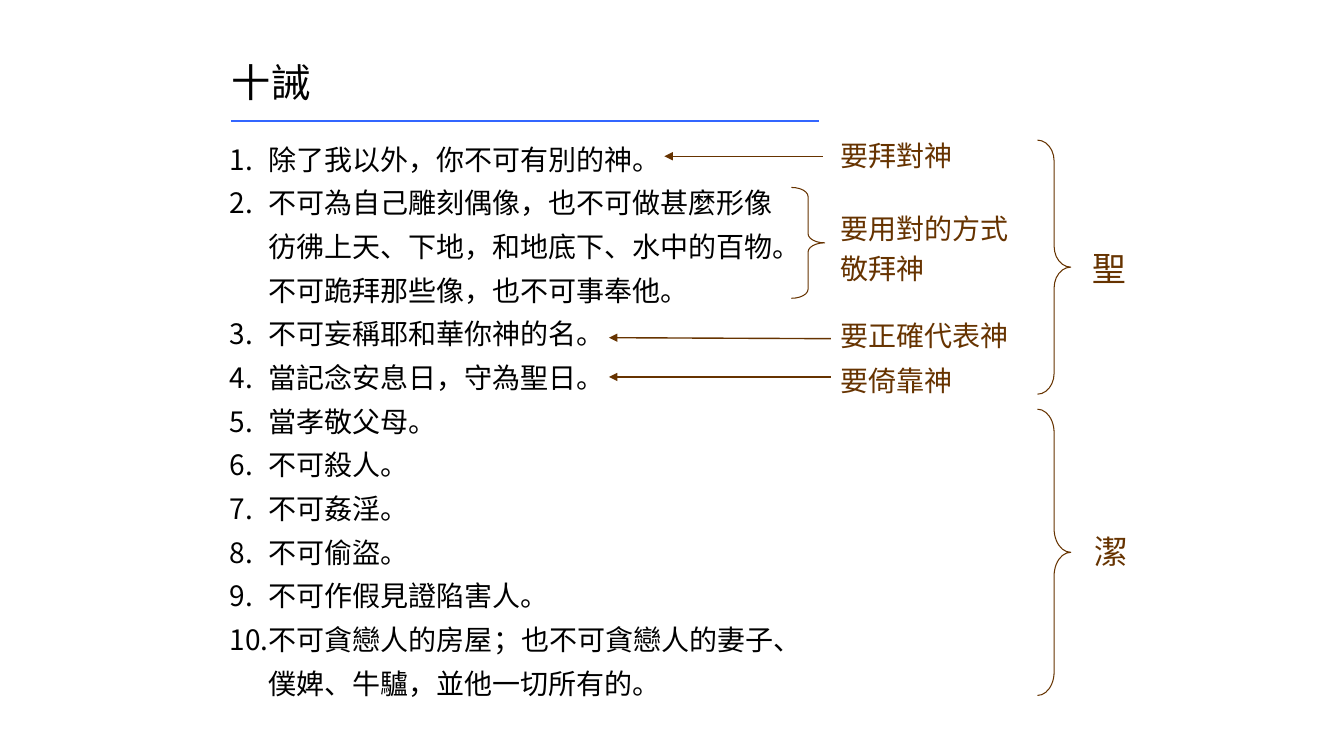
from lxml.etree import SubElement
from pptx import Presentation
from pptx.dml.color import RGBColor
from pptx.enum.shapes import MSO_CONNECTOR, MSO_SHAPE
from pptx.enum.text import MSO_ANCHOR, MSO_AUTO_SIZE, PP_ALIGN
from pptx.oxml.ns import qn
from pptx.util import Inches, Pt

COLORS = {"ink": "000000", "note": "663300", "rule": "3366FF"}
LATIN, CJK = "Calibri", "Noto Sans CJK SC"

COMMANDMENTS = [
    "除了我以外，你不可有別的神。",
    "不可為自己雕刻偶像，也不可做甚麼形像彷彿上天、下地，和地底下、水中的百物。不可跪拜那些像，也不可事奉他。",
    "不可妄稱耶和華你神的名。",
    "當記念安息日，守為聖日。",
    "當孝敬父母。",
    "不可殺人。",
    "不可姦淫。",
    "不可偷盜。",
    "不可作假見證陷害人。",
    "不可貪戀人的房屋；也不可貪戀人的妻子、僕婢、牛驢，並他一切所有的。",
]


def color(name):
    return RGBColor.from_string(COLORS[name])


def write(frame, text, size=20, font=LATIN, ink="note", spacing=None,
          wrap=False, numbered=False):
    """Fill a text frame, one paragraph per line of text."""
    frame.text = text
    frame.word_wrap = wrap
    frame.auto_size = MSO_AUTO_SIZE.SHAPE_TO_FIT_TEXT
    frame.vertical_anchor = MSO_ANCHOR.TOP
    for paragraph in frame.paragraphs:
        paragraph.alignment = PP_ALIGN.LEFT
        if spacing:
            paragraph.line_spacing = spacing
        if numbered:
            properties = paragraph._p.get_or_add_pPr()
            properties.set("marL", str(Inches(0.38)))
            properties.set("indent", str(Inches(-0.38)))
            SubElement(properties, qn("a:buFont"), typeface="+mj-lt")
            SubElement(properties, qn("a:buAutoNum"), type="arabicPeriod")
        for run in paragraph.runs:
            run.font.size = Pt(size)
            run.font.name = font
            run.font.color.rgb = color(ink)
            SubElement(run._r.get_or_add_rPr(), qn("a:ea"), typeface=CJK)


class Board:
    """Holds the current slide and its drawing style."""

    def __init__(self, slide):
        self.slide = slide
        self.shapes = slide.shapes

    def title(self, text, left, top, width, height):
        heading = self.shapes.title
        heading.left, heading.top = Inches(left), Inches(top)
        heading.width, heading.height = Inches(width), Inches(height)
        write(heading.text_frame, text, size=28, ink="ink")

    def text(self, text, left, top, width, height, **style):
        box = self.shapes.add_textbox(
            Inches(left), Inches(top), Inches(width), Inches(height))
        write(box.text_frame, text, **style)
        return box

    def brace(self, left, top, height, curl):
        brace = self.shapes.add_shape(
            MSO_SHAPE.RIGHT_BRACE,
            Inches(left), Inches(top), Inches(0.33), Inches(height))
        brace.adjustments[0] = curl
        brace.adjustments[1] = 0.5
        brace.shadow.inherit = False
        brace.fill.background()
        brace.line.color.rgb = color("note")
        brace.line.width = Pt(0.75)

    def line(self, start, end, ink="note", width=1, arrow=True):
        line = self.shapes.add_connector(
            MSO_CONNECTOR.STRAIGHT, *map(Inches, start + end))
        line.line.color.rgb = color(ink)
        line.line.width = Pt(width)
        if arrow:
            SubElement(line.line._get_or_add_ln(), qn("a:tailEnd"), type="triangle")
        SubElement(line._element.spPr, qn("a:effectLst"))
        return line


def main():
    deck = Presentation()
    deck.slide_width, deck.slide_height = Inches(13.33), Inches(7.5)
    board = Board(deck.slides.add_slide(deck.slide_layouts[5]))

    # Heading and its rule
    board.title("十誡", 2.2, 0.53, 0.98, 0.57)
    board.line((2.29, 1.2), (8.12, 1.2), ink="rule", width=1.5, arrow=False)

    # The ten commandments
    board.text("\n".join(COMMANDMENTS), 2.18, 1.26, 5.78, 5.74, font=CJK,
               ink="ink", spacing=1.3, wrap=True, numbered=True)

    # Meaning of the first four
    for meaning, top, width, height in [
        ("要拜對神", 1.26, 1.31, 0.5),
        ("要用對的方式\n敬拜神", 1.98, 1.88, 0.91),
        ("要正確代表神", 3.04, 1.87, 0.5),
        ("要倚靠神", 3.49, 1.31, 0.5),
    ]:
        label = board.text(meaning, 8.24, top, width, height, spacing=1.2)

    # Arrows back to the list; the last one leaves the last label
    board.line((8.16, 1.55), (6.59, 1.55))
    board.line((8.24, 3.36), (6.04, 3.35))
    reliance = board.line((8.24, 3.74), (6.04, 3.74))
    reliance.begin_connect(label, 1)

    # Braces and the two groups
    board.brace(7.85, 1.86, 1.1, 0.276)
    board.brace(10.29, 1.39, 2.52, 0.63)
    board.brace(10.29, 4.06, 2.84, 0.709)
    board.text("聖", 10.74, 2.41, 0.53, 0.5, size=24)
    board.text("潔", 10.76, 5.22, 0.53, 0.5, size=24)

    deck.save("out.pptx")


if __name__ == "__main__":
    main()
